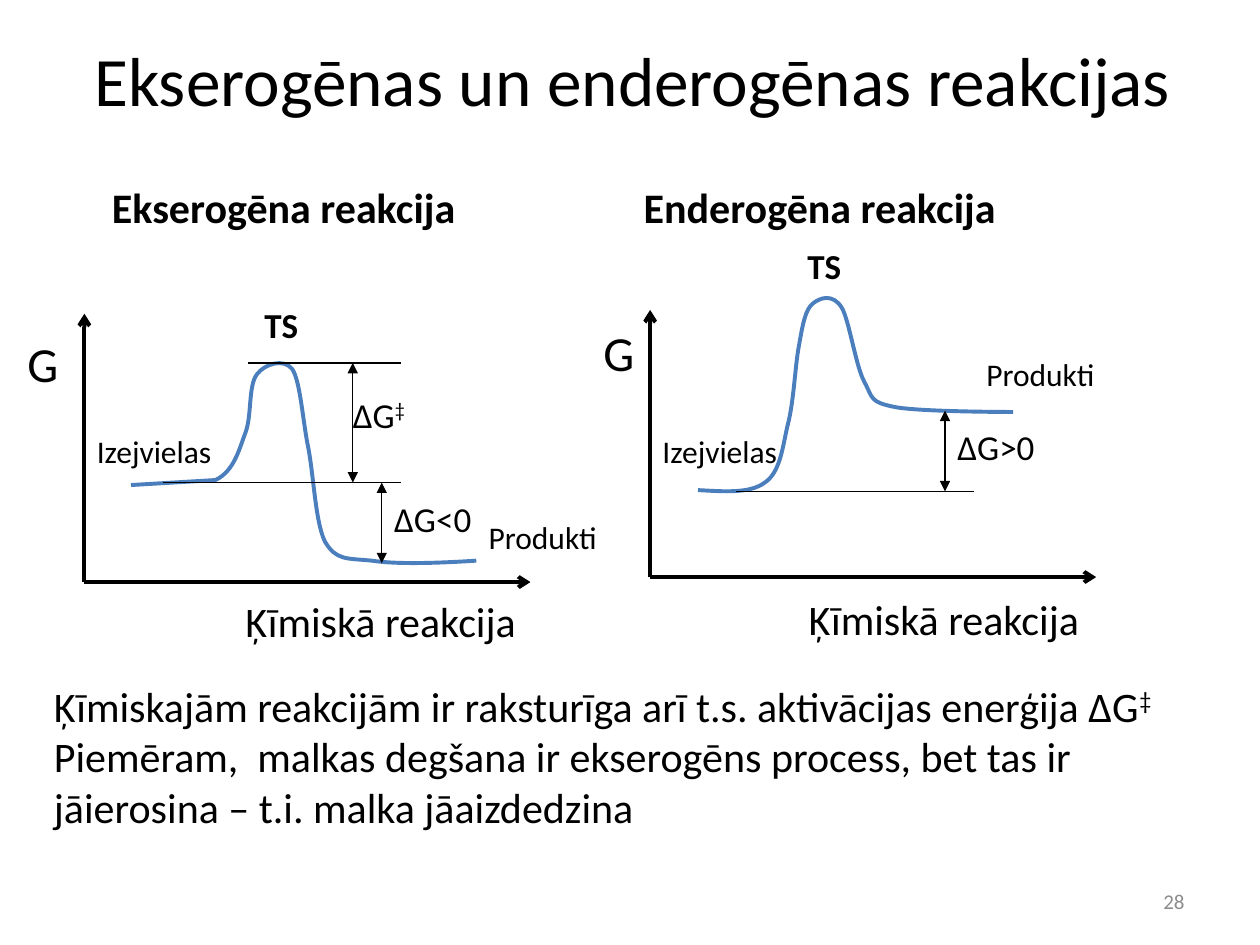
from pptx import Presentation
from pptx.dml.color import RGBColor
from pptx.enum.shapes import MSO_CONNECTOR
from pptx.enum.text import MSO_ANCHOR as ANCHOR, PP_ALIGN as ALIGN
from pptx.oxml.ns import qn
from pptx.util import Inches, Pt
from lxml.etree import SubElement

DAGGER = "‡"

prs = Presentation()
prs.slide_width, prs.slide_height = Inches(10), Inches(7.5)
s = prs.slides.add_slide(prs.slide_layouts[6])


def add_text(x, y, w, h, size, lines, bold=False, color="000000",
             align=ALIGN.LEFT, anchor=ANCHOR.TOP, wrap=True):
    """Add a text box with one paragraph per line; double daggers are raised."""
    tf = s.shapes.add_textbox(Inches(x), Inches(y), Inches(w), Inches(h)).text_frame
    tf.word_wrap = wrap
    tf.vertical_anchor = anchor
    for i, line in enumerate(lines):
        p = tf.paragraphs[0] if i == 0 else tf.add_paragraph()
        p.alignment = align
        p.font.name, p.font.size, p.font.bold = "Calibri", Pt(size), bold
        p.font.color.rgb = RGBColor.from_string(color)
        body, mark, _ = line.partition(DAGGER)
        p.add_run().text = body
        if mark:
            r = p.add_run()
            r.text = mark
            r._r.get_or_add_rPr().set("baseline", "30000")


def add_line(x1, y1, x2, y2, width, head=None, tail=None):
    """Add a black line; head is the arrowhead at its start, tail at its end."""
    c = s.shapes.add_connector(MSO_CONNECTOR.STRAIGHT, Inches(x1), Inches(y1),
                               Inches(x2), Inches(y2))
    c.line.color.rgb = RGBColor.from_string("000000")
    c.line.width = Pt(width)
    ln = c.line._get_or_add_ln()
    for tag, kind in (("a:headEnd", head), ("a:tailEnd", tail)):
        if kind:
            SubElement(ln, qn(tag)).set("type", kind)
    SubElement(c._element.spPr, qn("a:effectLst"))


add_text(0.52, 0, 9, 1.25, 39.6, ["Ekserogēnas un enderogēnas reakcijas"],
         align=ALIGN.CENTER, anchor=ANCHOR.MIDDLE)

# Energy curves: straight points, then Bezier triples (control, control, end)
exergonic = [
    (1.04, 3.85), (1.71, 3.81),
    (1.86, 3.74), (1.9, 3.56), (1.95, 3.43),
    (2, 3.29), (1.97, 3.06), (2.04, 2.97),
    (2.1, 2.89), (2.25, 2.84), (2.32, 2.93),
    (2.38, 3.02), (2.4, 3.3), (2.44, 3.52),
    (2.49, 3.75), (2.5, 4.14), (2.58, 4.3),
    (2.67, 4.45), (2.75, 4.43), (2.95, 4.45),
    (3.15, 4.48), (3.47, 4.47), (3.78, 4.45),
]
endergonic = [
    (5.54, 3.89),
    (5.74, 3.9), (5.95, 3.92), (6.07, 3.83),
    (6.19, 3.75), (6.21, 3.56), (6.25, 3.38),
    (6.3, 3.2), (6.31, 2.91), (6.34, 2.75),
    (6.37, 2.58), (6.39, 2.46), (6.45, 2.41),
    (6.51, 2.36), (6.61, 2.33), (6.68, 2.44),
    (6.74, 2.54), (6.79, 2.9), (6.86, 3.03),
    (6.93, 3.16), (6.9, 3.19), (7.1, 3.23),
    (7.3, 3.27), (8.04, 3.27), (8.04, 3.27),
]
for curve, straight in ((exergonic, 1), (endergonic, 0)):
    points = [(Inches(x), Inches(y)) for x, y in curve]
    fb = s.shapes.build_freeform(*points[0])
    fb.add_line_segments(points[1:], close=False)
    sp = fb.convert_to_shape()
    sp.shadow.inherit = False
    sp.fill.background()
    sp.line.color.rgb = RGBColor.from_string("4B7EBC")
    sp.line.width = Pt(2.25)
    # Turn each triple of line segments into one Bezier segment
    segments = list(sp._element.iter(qn("a:lnTo")))[straight:]
    outline = segments[0].getparent()
    for i in range(0, len(segments), 3):
        bezier = SubElement(outline, qn("a:cubicBezTo"))
        for segment in segments[i:i + 3]:
            bezier.append(segment[0])
            outline.remove(segment)

# Axes
for x, y, top in ((0.67, 4.62, 2.49), (5.16, 4.58, 2.46)):
    add_line(x, y, x, top, 2.25, tail="arrow")
    add_line(x, y, x + 3.54, y, 2.25, tail="arrow")

# Energy levels and the differences between them
for x1, x2, y in ((1.29, 3.18, 3.83), (5.84, 7.73, 3.9), (1.97, 3.18, 2.88)):
    add_line(x1, y, x2, y, 0.75)
for x, y1, y2 in ((3.03, 3.83, 4.47), (7.5, 3.26, 3.9), (2.8, 2.88, 3.83)):
    add_line(x, y1, x, y2, 0.75, head="triangle", tail="triangle")

# Labels: text, width, height, size, bold, position in each diagram
labels = [
    ("G", 0.67, 0.57, 28, False, [(0.12, 2.6), (4.69, 2.51)]),
    ("TS", 0.58, 0.44, 20, True, [(2, 2.36), (6.31, 1.89)]),
    ("Ķīmiskā reakcija", 2.36, 0.5, 24, False, [(1.85, 4.68), (6.32, 4.66)]),
    ("Ekserogēna reakcija", 3.19, 0.5, 24, True, [(0.79, 1.39)]),
    ("Enderogēna reakcija", 3.19, 0.5, 24, True, [(5.01, 1.39)]),
    ("ΔG<0", 1.35, 0.44, 20, False, [(3.03, 3.9)]),
    ("ΔG>0", 1.35, 0.44, 20, False, [(7.5, 3.33)]),
    ("Izejvielas", 1.3, 0.4, 18, False, [(0.67, 3.38), (5.16, 3.38)]),
    ("Produkti", 1.38, 0.4, 18, False, [(3.78, 4.06), (7.73, 2.77)]),
]
for text, w, h, size, bold, places in labels:
    for x, y in places:
        add_text(x, y, w, h, size, [text], bold)
add_text(2.64, 3.07, 0.69, 0.44, 20, [" ΔG‡"], wrap=False)

add_text(0.33, 5.35, 9.47, 1.72, 24, [
    "Ķīmiskajām reakcijām ir raksturīga arī t.s. aktivācijas enerģija ΔG‡",
    "Piemēram,  malkas degšana ir ekserogēns process, bet tas ir "
    "jāierosina – t.i. malka jāaizdedzina",
])
add_text(7.17, 6.95, 2.33, 0.4, 12, ["28"], color="8C8C8C",
         align=ALIGN.RIGHT, anchor=ANCHOR.MIDDLE)

prs.save("out.pptx")
